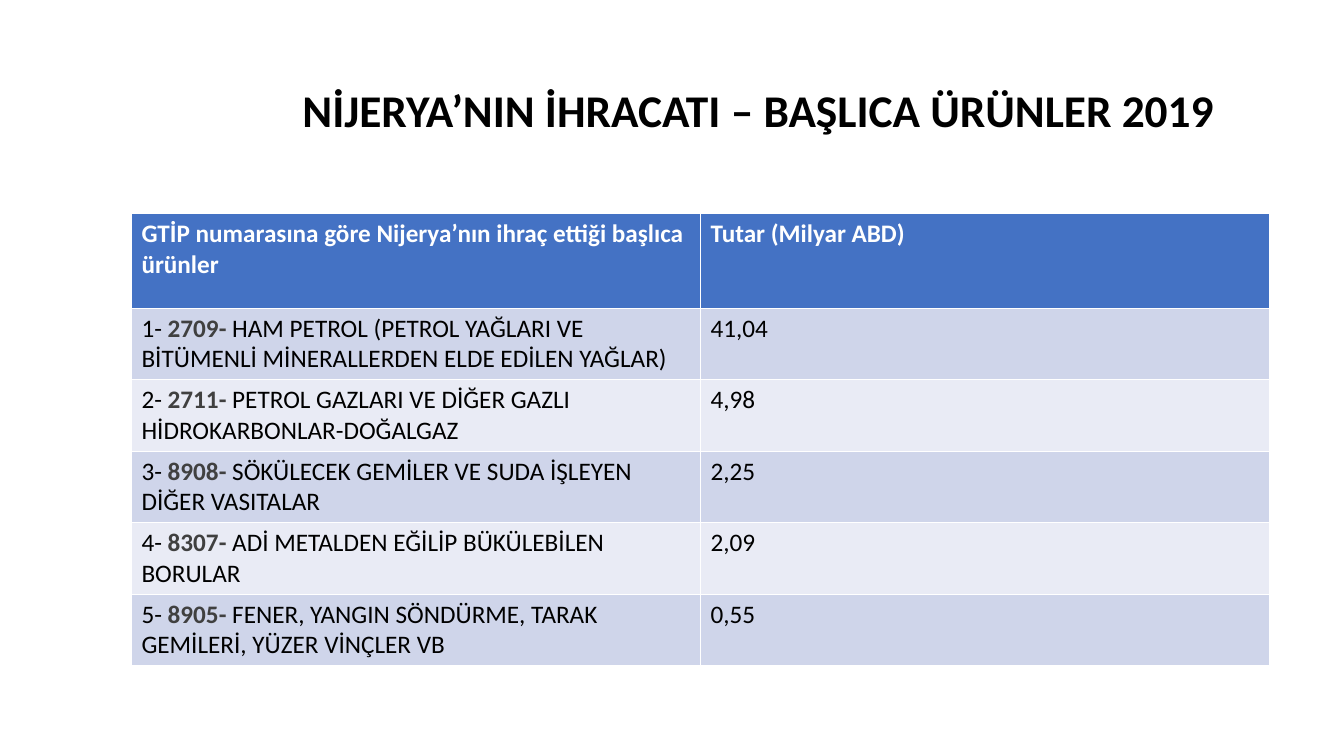
"""Builds a slide with a table of Nigeria's main export products in 2019."""
import pptx
import pptx.dml.color
import pptx.enum.text
import pptx.util

Pt = pptx.util.Pt
RGBColor = pptx.dml.color.RGBColor
PP_ALIGN = pptx.enum.text.PP_ALIGN

TITLE = "NİJERYA’NIN İHRACATI – BAŞLICA ÜRÜNLER 2019"
HEADER = ("GTİP numarasına göre Nijerya’nın ihraç ettiği başlıca ürünler", "Tutar (Milyar ABD)")
PRODUCTS = [
    ("2709", "HAM PETROL (PETROL YAĞLARI VE BİTÜMENLİ MİNERALLERDEN ELDE EDİLEN YAĞLAR)", "41,04"),
    ("2711", "PETROL GAZLARI VE DİĞER GAZLI HİDROKARBONLAR-DOĞALGAZ", "4,98"),
    ("8908", "SÖKÜLECEK GEMİLER VE SUDA İŞLEYEN DİĞER VASITALAR", "2,25"),
    ("8307", "ADİ METALDEN EĞİLİP BÜKÜLEBİLEN BORULAR", "2,09"),
    ("8905", "FENER, YANGIN SÖNDÜRME, TARAK GEMİLERİ, YÜZER VİNÇLER VB", "0,55"),
]

BLACK = RGBColor(0x00, 0x00, 0x00)
WHITE = RGBColor(0xFF, 0xFF, 0xFF)
GRAY = RGBColor(0x40, 0x40, 0x40)
BLUE = RGBColor(0x44, 0x72, 0xC4)
BANDS = (RGBColor(0xCF, 0xD5, 0xEA), RGBColor(0xE9, 0xEB, 0xF5))

HEADER_HEIGHT, ROW_HEIGHT, COLUMN_WIDTH = 67.7, 51.1, 406.5


def add_text(p, text, size=18, color=BLACK, bold=False):
    r = p.add_run()
    r.text = text
    r.font.name = "Calibri"
    r.font.size = Pt(size)
    r.font.color.rgb = color
    r.font.bold = bold


def fill_cell(cell, color):
    cell.fill.solid()
    cell.fill.fore_color.rgb = color
    return cell.text_frame.paragraphs[0]


def add_title(s):
    tf = s.shapes.add_textbox(Pt(201.6), Pt(59.8), Pt(680.4), Pt(64.8)).text_frame
    tf.word_wrap = True
    p = tf.paragraphs[0]
    p.alignment = PP_ALIGN.CENTER
    p.line_spacing = 0.9
    add_text(p, TITLE, size=32.4, bold=True)


def add_products(s):
    height = HEADER_HEIGHT + ROW_HEIGHT * len(PRODUCTS)
    frame = s.shapes.add_table(len(PRODUCTS) + 1, len(HEADER), Pt(93.9), Pt(152.4),
                               Pt(COLUMN_WIDTH * len(HEADER)), Pt(height))
    table = frame.table
    for column in table.columns:
        column.width = Pt(COLUMN_WIDTH)
    for i, row in enumerate(table.rows):
        row.height = Pt(ROW_HEIGHT if i else HEADER_HEIGHT)
    for j, text in enumerate(HEADER):
        add_text(fill_cell(table.cell(0, j), BLUE), text, color=WHITE, bold=True)
    for i, (code, product, amount) in enumerate(PRODUCTS, 1):
        band = BANDS[(i - 1) % 2]
        p = fill_cell(table.cell(i, 0), band)
        add_text(p, f"{i}- ")
        add_text(p, f"{code}- ", color=GRAY, bold=True)
        add_text(p, product)
        add_text(fill_cell(table.cell(i, 1), band), amount)


def main():
    prs = pptx.Presentation()
    prs.slide_width, prs.slide_height = Pt(960), Pt(540)
    s = prs.slides.add_slide(prs.slide_layouts[6])
    add_title(s)
    add_products(s)
    prs.save("out.pptx")


if __name__ == "__main__":
    main()
